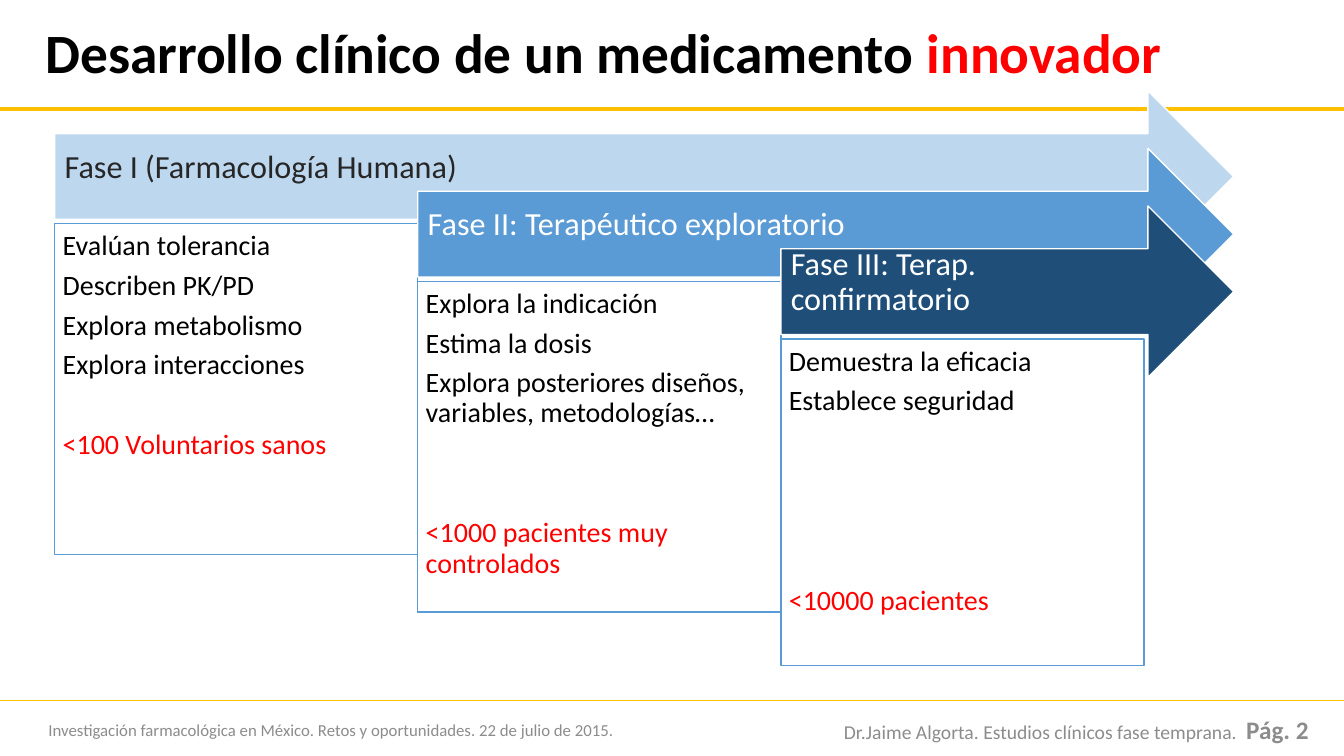
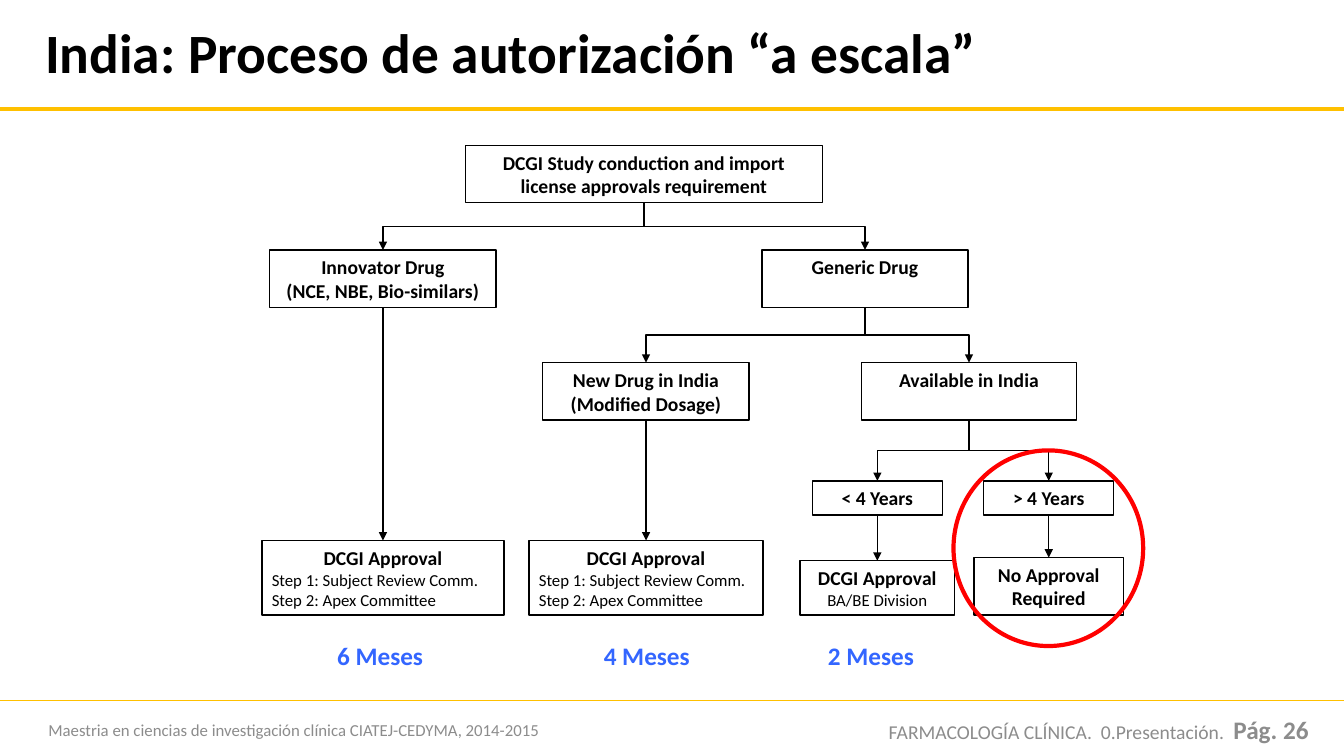
"""Builds two slides on clinical development phases and the approval process in India."""
from lxml import etree
from pptx import Presentation
from pptx.dml.color import RGBColor
from pptx.enum.shapes import MSO_CONNECTOR, MSO_SHAPE
from pptx.enum.text import MSO_ANCHOR, PP_ALIGN
from pptx.oxml.ns import qn
from pptx.util import Cm, Pt

RECT, ARROW, OVAL = MSO_SHAPE.RECTANGLE, MSO_SHAPE.RIGHT_ARROW, MSO_SHAPE.OVAL
STRAIGHT, ELBOW = MSO_CONNECTOR.STRAIGHT, MSO_CONNECTOR.ELBOW
TOP, MIDDLE = MSO_ANCHOR.TOP, MSO_ANCHOR.MIDDLE
LEFT, CENTER, RIGHT = PP_ALIGN.LEFT, PP_ALIGN.CENTER, PP_ALIGN.RIGHT

WIDTH, HEIGHT = 33.87, 19.05
COLORS = {
    "black": "000000", "white": "FFFFFF", "red": "FF0000", "gold": "FFC000",
    "gray": "8C8C8C", "ink": "262626", "months": "3366FF", "border": "5B9BD5",
    "light": "BDD7EE", "mid": "5B9BD5", "dark": "1F4E79",
}
FONT = "Calibri"
TITLE = {"size": Pt(39.6), "bold": True}
PHASE = {"size": Pt(23)}
ITEM = {"size": Pt(20)}
HEAD = {"size": Pt(14), "bold": True}
STEP = {"size": Pt(12)}
NOTE = {"size": Pt(14)}
PAGE = {"size": Pt(18), "bold": True}
TIGHT = {"line_spacing": 0.9}
LIST = {"line_spacing": 0.9, "space_after": Pt(6.7)}
LIST_PITCH = 28.7

PHASES = [
    ("Fase I (Farmacología Humana)", "light", "ink", 8.33,
     ["Evalúan tolerancia", "Describen PK/PD", "Explora metabolismo",
      "Explora interacciones"], 1, "<100 Voluntarios sanos"),
    ("Fase II: Terapéutico exploratorio", "mid", "white", 8.33,
     ["Explora la indicación", "Estima la dosis",
      "Explora posteriores diseños, variables, metodologías…"],
     2, "<1000 pacientes muy controlados"),
    ("Fase III: Terap. confirmatorio", "dark", "white", 8.23,
     ["Demuestra la eficacia", "Establece seguridad"], 4, "<10000 pacientes"),
]

STEPS = ["Step 1: Subject Review Comm.", "Step 2: Apex Committee"]
NODES = {
    "root": (16.23, 3.66, 9, 1.45,
             ["DCGI Study conduction and import license approvals requirement"], [], CENTER),
    "innovator": (9.65, 6.3, 5.7, 1.45,
                  ["Innovator Drug", "(NCE, NBE, Bio-similars)"], [], CENTER),
    "generic": (21.8, 6.3, 5.2, 1.45, ["Generic Drug"], [], CENTER),
    "new": (16.28, 9.14, 5.2, 1.45, ["New Drug in India (Modified Dosage)"], [], CENTER),
    "available": (24.42, 9.14, 5.42, 1.45, ["Available in India"], [], CENTER),
    "under": (22.11, 12.12, 3.28, 0.86, ["< 4 Years"], [], CENTER),
    "over": (26.43, 12.12, 3.28, 0.86, ["> 4 Years"], [], CENTER),
    "six": (9.65, 13.62, 6.1, 1.88, ["DCGI Approval"], STEPS, LEFT),
    "four": (16.28, 13.62, 5.9, 1.88, ["DCGI Approval"], STEPS, LEFT),
    "two": (22.11, 14.13, 3.9, 1.37, ["DCGI Approval"], ["BA/BE Division"], CENTER),
    "none": (26.43, 14.05, 3.76, 1.45, ["No Approval Required"], [], CENTER),
}
TOP_NODES = {"generic", "available"}
LINKS = [
    ("root", "innovator"), ("root", "generic"), ("generic", "new"),
    ("generic", "available"), ("available", "under"), ("available", "over"),
    ("innovator", "six"), ("new", "four"), ("under", "two"), ("over", "none"),
]
MONTHS = [("6 Meses", 9.58), ("4 Meses", 16.3), ("2 Meses", 21.95)]


def rgb(name):
    return RGBColor.from_string(COLORS[name])


def set_all(target, values):
    for key, value in values.items():
        setattr(target, key, value)


def write(sp, paragraphs, anchor=MIDDLE, insets=(0.25, 0.13, 0.25, 0.13)):
    tf = sp.text_frame
    set_all(tf, {"word_wrap": True, "vertical_anchor": anchor})
    sides = ("margin_left", "margin_top", "margin_right", "margin_bottom")
    set_all(tf, {side: Cm(inset) for side, inset in zip(sides, insets)})
    for i, (layout, runs) in enumerate(paragraphs):
        p = tf.add_paragraph() if i else tf.paragraphs[0]
        set_all(p, {"alignment": LEFT, **layout})
        for text, font, color in runs:
            r = p.add_run()
            r.text = text
            set_all(r.font, {"name": FONT, **font})
            r.font.color.rgb = rgb(color)


def add_text(s, box, runs, **layout):
    sp = s.shapes.add_textbox(*map(Cm, box))
    write(sp, [(layout, runs)])


def add_shape(s, kind, box, line, fill=None, weight=1):
    sp = s.shapes.add_shape(kind, *map(Cm, box))
    sp.shadow.inherit = False
    if fill:
        sp.fill.solid()
        sp.fill.fore_color.rgb = rgb(fill)
    else:
        sp.fill.background()
    sp.line.color.rgb = rgb(line)
    sp.line.width = Pt(weight)
    return sp


def add_line(s, kind, points, color, weight):
    line = s.shapes.add_connector(kind, *map(Cm, points))
    line.line.color.rgb = rgb(color)
    line.line.width = Pt(weight)
    etree.SubElement(line._element.spPr, qn("a:effectLst"))
    return line


def turn_down(line, start, end):
    (x1, y1), (x2, y2) = start, end
    run, rise = y2 - y1, abs(x2 - x1)
    set_all(line, {
        "left": Cm((x1 + x2 - run) / 2), "top": Cm((y1 + y2 - rise) / 2),
        "width": Cm(run), "height": Cm(rise),
    })
    xfrm = line._element.spPr.find(qn("a:xfrm"))
    to_right = x2 > x1
    xfrm.set("rot", "16200000" if to_right else "5400000")
    xfrm.set("flipH", "1" if to_right else "0")
    xfrm.set("flipV", "0")


def link(s, boxes, parent, child):
    x1, top, _, height = NODES[parent][:4]
    x2, y2 = NODES[child][:2]
    y1 = top + height
    line = add_line(s, STRAIGHT if x1 == x2 else ELBOW, (x1, y1, x2, y2), "black", 1)
    line.begin_connect(boxes[parent], 2)
    line.end_connect(boxes[child], 0)
    if x1 != x2:
        turn_down(line, (x1, y1), (x2, y2))
    ln = line._element.spPr.find(qn("a:ln"))
    etree.SubElement(ln, qn("a:tailEnd"), type="triangle")


def new_slide(prs, title, event, topic, page):
    s = prs.slides.add_slide(prs.slide_layouts[6])
    for y, weight in ((2.74, 3), (17.65, 1)):
        add_line(s, STRAIGHT, (0, y, WIDTH, y), "gold", weight)
    add_text(s, (0.89, 0.56, 32.33, 1.7),
             [(text, TITLE, color) for text, color in title], **TIGHT)
    add_text(s, (0.97, 17.86, 16.46, 1.07), [(event, STEP, "gray")])
    add_text(s, (20.07, 17.86, 13.16, 1.02),
             [(topic + "  ", NOTE, "gray"), (f"Pág. {page}", PAGE, "gray")],
             alignment=RIGHT)
    return s


def add_phase(s, index, phase):
    name, fill, ink, height, items, gap, sample = phase
    x, y = 1.38 + 9.15 * index, 2.29 + 1.45 * index
    arrow = add_shape(s, ARROW, (x, y, 31.09 - x, 4.32), "white", fill)
    write(arrow, [(LIST, [(name, PHASE, ink)])], insets=(0.25, 0.25, 0.71, 0.69))
    box = add_shape(s, RECT, (x, y + 3.35, 9.15, height), "border", "white")
    paragraphs = [(LIST, [(item, ITEM, "black")]) for item in items]
    spaced = {**LIST, "space_before": Pt(gap * LIST_PITCH)}
    paragraphs.append((spaced, [(sample, ITEM, "red")]))
    write(box, paragraphs, TOP, (0.2, 0.2, 0.2, 0.2))


def add_node(s, key):
    x, y, width, height, heads, steps, align = NODES[key]
    sp = add_shape(s, RECT, (x - width / 2, y, width, height), "black")
    paragraphs = [({"alignment": CENTER}, [(text, HEAD, "black")]) for text in heads]
    paragraphs += [({"alignment": align}, [(text, STEP, "black")]) for text in steps]
    write(sp, paragraphs, TOP if key in TOP_NODES else MIDDLE)
    return sp


def build_phases(prs):
    s = new_slide(
        prs,
        [("Desarrollo clínico de un medicamento ", "black"), ("innovador", "red")],
        "Investigación farmacológica en México. Retos y oportunidades. 22 de julio de 2015.",
        "Dr.Jaime Algorta. Estudios clínicos fase temprana.", 2)
    for index, phase in enumerate(PHASES):
        add_phase(s, index, phase)


def build_approvals(prs):
    s = new_slide(
        prs, [("India: Proceso de autorización “a escala”", "black")],
        "Maestria en ciencias de investigación clínica CIATEJ-CEDYMA, 2014-2015",
        "FARMACOLOGÍA CLÍNICA.  0.Presentación.", 26)
    boxes = {key: add_node(s, key) for key in NODES}
    for parent, child in LINKS:
        link(s, boxes, parent, child)
    for text, x in MONTHS:
        add_text(s, (x - 2, 16, 4, 1.02), [(text, PAGE, "months")], alignment=CENTER)
    add_shape(s, OVAL, (24.03, 11.35, 4.78, 4.93), "red", weight=3)


def main():
    prs = Presentation()
    set_all(prs, {"slide_width": Cm(WIDTH), "slide_height": Cm(HEIGHT)})
    build_phases(prs)
    build_approvals(prs)
    prs.save("out.pptx")


if __name__ == "__main__":
    main()
